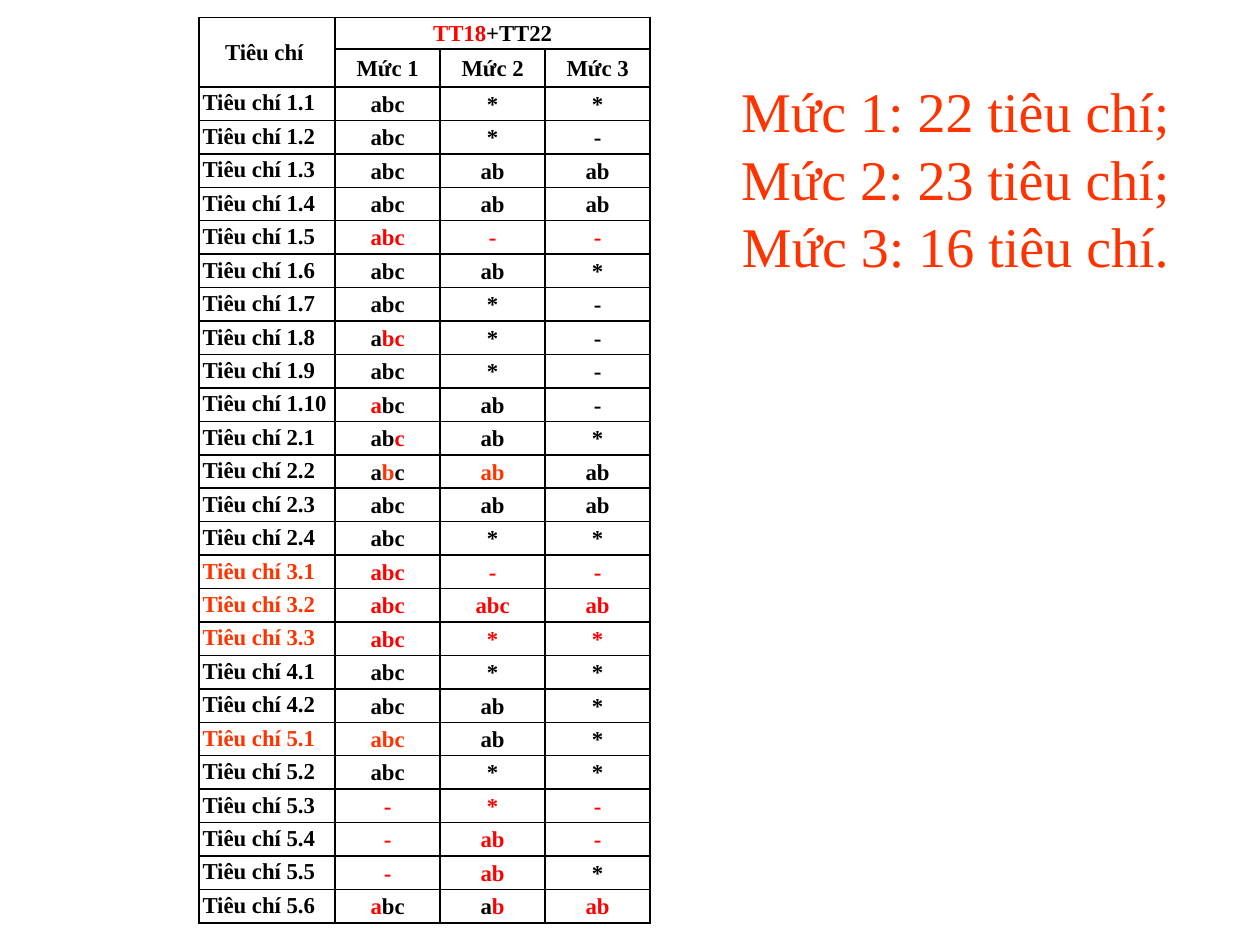
from lxml.etree import SubElement
from pptx import Presentation
from pptx.dml.color import RGBColor
from pptx.enum.text import MSO_ANCHOR as ANCHOR, PP_ALIGN as ALIGN
from pptx.oxml.ns import qn
from pptx.util import Inches, Pt

BLACK = RGBColor(0x00, 0x00, 0x00)
RED = RGBColor(0xFF, 0x00, 0x00)
ORANGE = RGBColor(0xFF, 0x33, 0x00)
MARKS = {"^": RED, "~": ORANGE}
FONT = "Times New Roman"
INSETS = {"margin_left": Pt(2), "margin_right": Pt(2),
          "margin_top": Pt(1.2), "margin_bottom": Pt(1.2)}

# Each line: criterion, level 1, level 2, level 3.
# "|" separates runs; a leading "^" makes a run red, "~" makes it orange.
CRITERIA = """
1.1 abc * *
1.2 abc * -
1.3 abc ab ab
1.4 abc ab ab
1.5 ^abc ^- ^-
1.6 abc ab *
1.7 abc * -
1.8 a|^bc * -
1.9 abc * -
1.10 ^a|bc ab -
2.1 ab|^c ab *
2.2 a|~b|c ~ab ab
2.3 abc ab ab
2.4 abc * *
~3.1 ^abc ^- ^-
~3.2 ^abc ^abc ^ab
~3.3 ^abc ^* ^*
4.1 abc * *
4.2 abc ab *
~5.1 ~abc ab *
5.2 abc * *
5.3 ^- ^* ^-
5.4 ^- ^ab ^-
5.5 ^- ^ab *
5.6 ^a|bc a|^b ^ab
""".split("\n")[1:-1]


def add_runs(p, marked, **font):
    """Add the runs of a marked-up string, coloured by their marks."""
    for part in marked.split("|"):
        r = p.add_run()
        r.text = part.lstrip("^~")
        for name, value in font.items():
            setattr(r.font, name, value)
        r.font.name = FONT
        r.font.color.rgb = MARKS.get(part[0], BLACK)


def add_borders(cell):
    tc_pr = cell._tc.get_or_add_tcPr()
    for side in ("lnL", "lnR", "lnT", "lnB"):
        ln = SubElement(tc_pr, qn(f"a:{side}"), w=str(Pt(1)))
        fill = SubElement(ln, qn("a:solidFill"))
        SubElement(fill, qn("a:srgbClr"), val=str(BLACK))


prs = Presentation()
prs.slide_width, prs.slide_height = Inches(10), Inches(7.5)
s = prs.slides.add_slide(prs.slide_layouts[6])

# Summary of the number of criteria at each level
sp = s.shapes.add_textbox(Inches(5.75), Inches(0.33), Inches(3.67), Inches(2.16))
tf = sp.text_frame
tf.word_wrap = True
tf.vertical_anchor = ANCHOR.MIDDLE
p = tf.paragraphs[0]
p.alignment = ALIGN.CENTER
add_runs(p, "~Mức 1: 22 tiêu chí; Mức 2: 23 tiêu chí; Mức 3: 16 tiêu chí.", size=Pt(32))

# Table of criteria: two header rows, then rows of equal height
col_widths = [1.08] + [2.5 / 3] * 3
header_heights = [0.25, 0.3]
table_height = 7.16
row_height = (table_height - sum(header_heights)) / len(CRITERIA)
row_heights = header_heights + [row_height] * len(CRITERIA)

rows = [["Tiêu chí ", "^TT18|+TT22", "", ""], ["", "Mức 1", "Mức 2", "Mức 3"]]
for line in CRITERIA:
    number, *levels = line.split()
    mark = number[0] if number[0] in MARKS else ""
    rows.append([f"{mark}Tiêu chí {number.lstrip('^~')}", *levels])

table = s.shapes.add_table(
    len(rows), len(col_widths), Inches(1.58), Inches(0.14),
    Inches(sum(col_widths)), Inches(table_height)).table
table.first_row = table.horz_banding = False
for column, width in zip(table.columns, col_widths):
    column.width = Inches(width)
for row, height in zip(table.rows, row_heights):
    row.height = Inches(height)
table.cell(0, 0).merge(table.cell(1, 0))
table.cell(0, 1).merge(table.cell(0, 3))

for i, row in enumerate(rows):
    for j, marked in enumerate(row):
        cell = table.cell(i, j)
        is_label = j == 0 and i > 1
        for name, inset in INSETS.items():
            setattr(cell, name, 0 if i == j == 0 else inset)
        cell.vertical_anchor = ANCHOR.TOP if is_label else ANCHOR.MIDDLE
        add_borders(cell)
        cell.fill.background()
        p = cell.text_frame.paragraphs[0]
        p.alignment = ALIGN.LEFT if is_label else ALIGN.CENTER
        p.line_spacing = 1.0 if i == 0 and j > 0 else 1.07
        if marked:
            add_runs(p, marked, size=Pt(13), bold=True)

prs.save("out.pptx")
